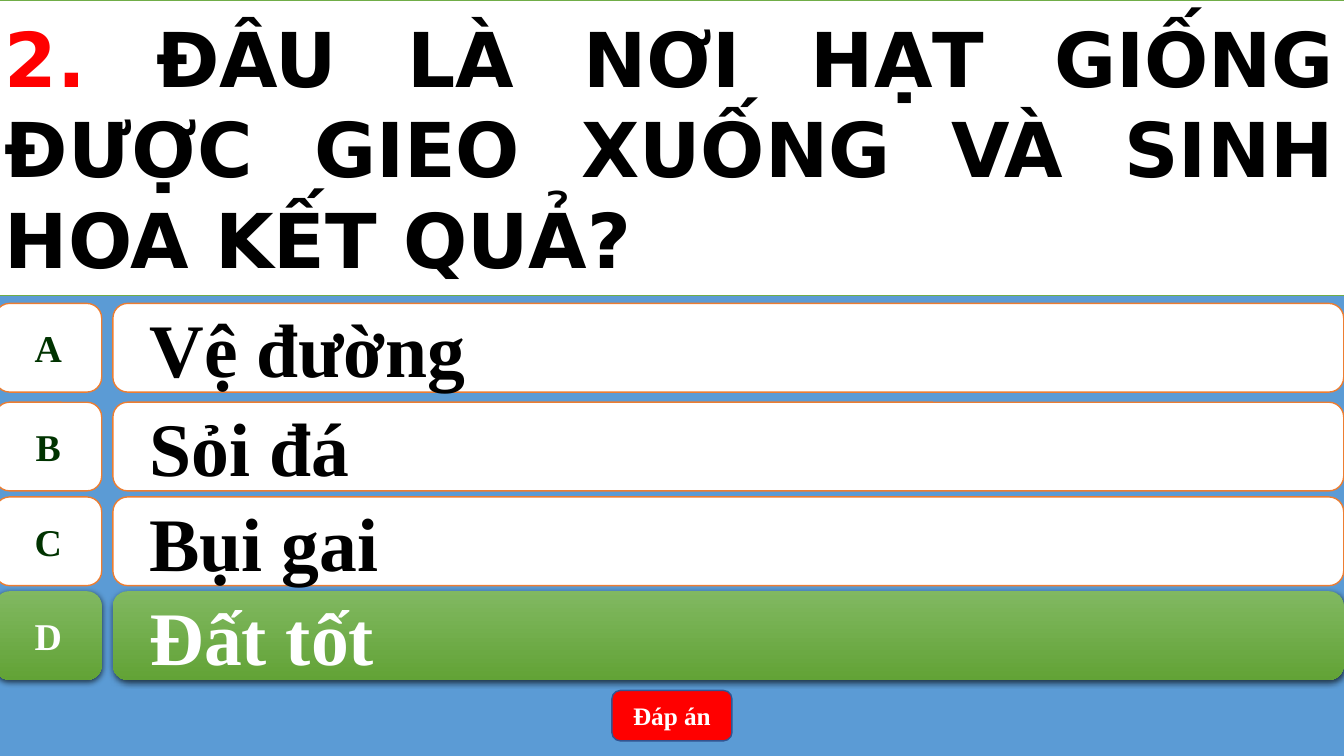
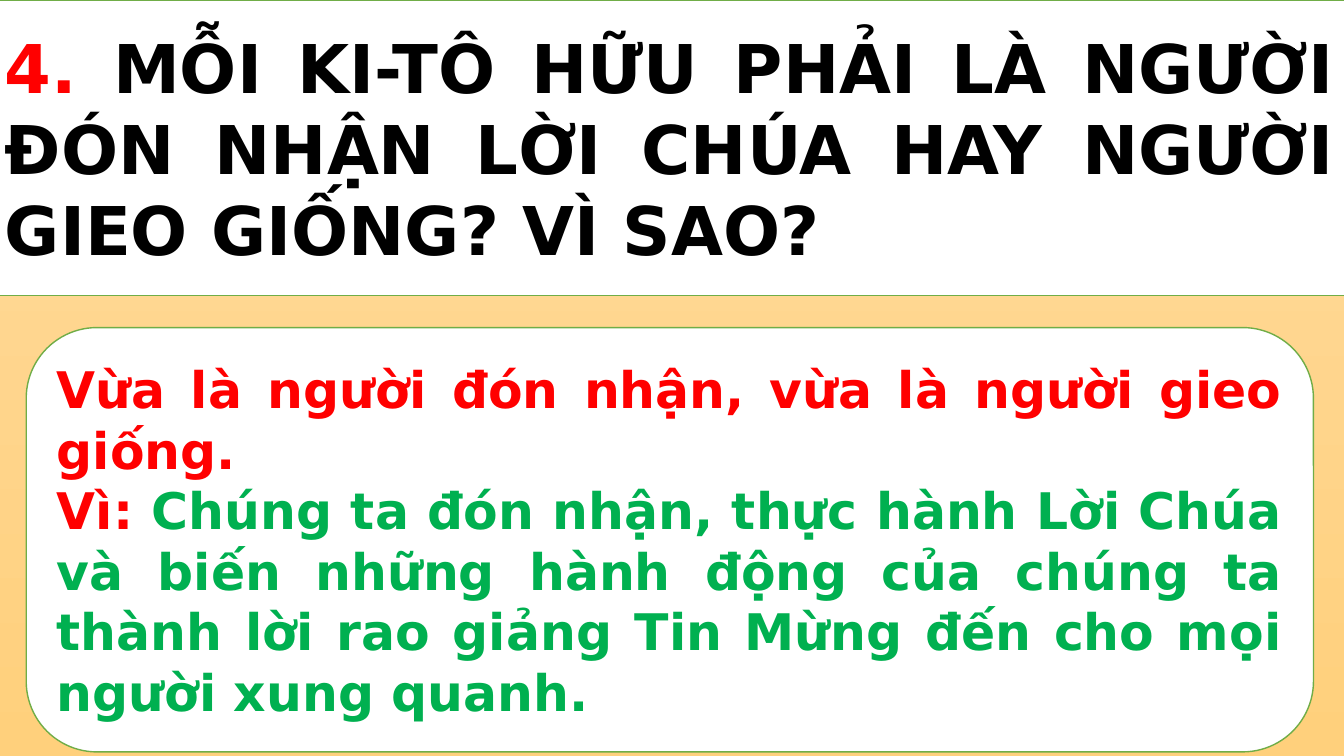
from lxml import etree
from pptx import Presentation
from pptx.dml.color import RGBColor
from pptx.enum.shapes import MSO_SHAPE
from pptx.enum.text import MSO_ANCHOR, MSO_AUTO_SIZE, PP_ALIGN
from pptx.oxml.ns import qn
from pptx.util import Inches, Pt

ROUNDED = MSO_SHAPE.ROUNDED_RECTANGLE
KEY_SHAPE = MSO_SHAPE.FLOWCHART_ALTERNATE_PROCESS
MIDDLE = MSO_ANCHOR.MIDDLE
NO_AUTOFIT = MSO_AUTO_SIZE.NONE
LEFT, CENTER, JUSTIFY = PP_ALIGN.LEFT, PP_ALIGN.CENTER, PP_ALIGN.JUSTIFY

TITLE_ONLY = 5
SANS, SERIF = "DejaVu Sans", "Times New Roman"
COLOURS = {
    "white": "FFFFFF", "black": "000000", "red": "FF0000", "blue": "5B9BD5",
    "navy": "325491", "orange": "ED7D31", "leaf": "70AD47", "key": "003300",
    "reason": "00B050", "green_top": "81B861", "green_bottom": "62A336",
    "sand_top": "FFDB9E", "sand_bottom": "FFD07C",
}
GREEN = ("green_top", "green_bottom")
SAND = ("sand_top", "sand_bottom")

QUESTION_BOX = (-0.38, 0, 100.43, 39.07)
KEY_LEFT, KEY_WIDTH = -0.38, 7.95
CHOICE_LEFT, CHOICE_WIDTH = 8.4, 91.58
ROW_HEIGHT = 11.73
BUTTON_BOX = (45.53, 91.33, 8.93, 6.67)
PANEL_BOX = (1.95, 43.33, 95.78, 56.13)


class QuizDeck:
    """Quiz slides in one style, with boxes given in percent of the slide."""

    def __init__(self):
        self.presentation = Presentation()
        self.presentation.slide_width = Inches(13.33)
        self.presentation.slide_height = Inches(7.5)
        self.slide = None

    def colour(self, name):
        return RGBColor.from_string(COLOURS[name])

    def place(self, box):
        width = self.presentation.slide_width
        height = self.presentation.slide_height
        return [round(share * side / 100)
                for share, side in zip(box, (width, height, width, height))]

    def paint(self, fill, colour):
        if isinstance(colour, str):
            fill.solid()
            fill.fore_color.rgb = self.colour(colour)
            return
        fill.gradient()
        fill.gradient_angle = 270
        for stop, name in zip(fill.gradient_stops, colour):
            stop.color.rgb = self.colour(name)

    def outline(self, shape, colour):
        if colour is None:
            shape.line.fill.background()
            return
        shape.line.color.rgb = self.colour(colour)
        shape.line.width = Pt(1)

    def set_text(self, shape, paragraphs, font, size, alignment):
        frame = shape.text_frame
        frame.auto_size = NO_AUTOFIT
        frame.word_wrap = True
        frame.vertical_anchor = MIDDLE
        for index, runs in enumerate(paragraphs):
            paragraph = frame.add_paragraph() if index else frame.paragraphs[0]
            paragraph.alignment = alignment
            paragraph.font.name = font
            paragraph.font.size = Pt(size)
            paragraph.font.bold = True
            for text, colour in runs:
                run = paragraph.add_run()
                run.text = text
                run.font.color.rgb = self.colour(colour)

    def cast_shadow(self, shape):
        effects = shape._element.spPr.find(qn("a:effectLst"))
        shadow = etree.SubElement(effects, qn("a:outerShdw"), blurRad="57150",
                                  dist="19050", dir="5400000", algn="ctr",
                                  rotWithShape="0")
        black = etree.SubElement(shadow, qn("a:srgbClr"), val=COLOURS["black"])
        etree.SubElement(black, qn("a:alpha"), val="63000")

    def box(self, kind, box, fill, line):
        shape = self.slide.shapes.add_shape(kind, *self.place(box))
        shape.shadow.inherit = False
        self.paint(shape.fill, fill)
        self.outline(shape, line)
        return shape

    def question(self, background, number, text, size):
        layout = self.presentation.slide_layouts[TITLE_ONLY]
        self.slide = self.presentation.slides.add_slide(layout)
        self.paint(self.slide.background.fill, background)
        title = self.slide.shapes.title
        title.left, title.top, title.width, title.height = self.place(QUESTION_BOX)
        self.paint(title.fill, "white")
        self.outline(title, "leaf")
        runs = [(f"{number}. ", "red"), (text, "black")]
        self.set_text(title, [runs], SANS, size, JUSTIFY)

    def choice(self, top, letter, text, correct):
        fill, line = (GREEN, None) if correct else ("white", "orange")
        key = self.box(KEY_SHAPE, (KEY_LEFT, top, KEY_WIDTH, ROW_HEIGHT), fill, line)
        bar = self.box(ROUNDED, (CHOICE_LEFT, top, CHOICE_WIDTH, ROW_HEIGHT), fill, line)
        key_colour, text_colour = ("white", "white") if correct else ("key", "black")
        self.set_text(key, [[(letter, key_colour)]], SERIF, 27, CENTER)
        self.set_text(bar, [[(text, text_colour)]], SERIF, 54, LEFT)
        bar.text_frame.margin_left = Inches(0.32)
        if correct:
            self.cast_shadow(key)
            self.cast_shadow(bar)

    def button(self, text):
        shape = self.box(ROUNDED, BUTTON_BOX, "red", "navy")
        self.set_text(shape, [[(text, "white")]], SERIF, 18, CENTER)

    def panel(self, paragraphs):
        shape = self.box(ROUNDED, PANEL_BOX, "white", "leaf")
        self.set_text(shape, paragraphs, SANS, 36, JUSTIFY)

    def save(self):
        self.presentation.save("out.pptx")


def main():
    deck = QuizDeck()

    deck.question("blue", 2, "ĐÂU LÀ NƠI HẠT GIỐNG ĐƯỢC GIEO XUỐNG VÀ SINH HOA KẾT QUẢ?", 54)
    choices = [
        (40.13, "A", "Vệ đường"),
        (53.2, "B", "Sỏi đá"),
        (65.73, "C", "Bụi gai"),
        (78.2, "D", "Đất tốt"),
    ]
    for top, letter, text in choices:
        deck.choice(top, letter, text, correct=letter == "D")
    deck.button("Đáp án")

    deck.question(SAND, 4, "MỖI KI-TÔ HỮU PHẢI LÀ NGƯỜI ĐÓN NHẬN LỜI CHÚA "
                  "HAY NGƯỜI GIEO GIỐNG? VÌ SAO?", 48)
    deck.panel([
        [("Vừa là người đón nhận, vừa là người gieo giống.", "red")],
        [("Vì: ", "red"),
         ("Chúng ta đón nhận, thực hành Lời Chúa và biến những hành động của "
          "chúng ta thành lời rao giảng Tin Mừng đến cho mọi người xung quanh.",
          "reason")],
    ])
    deck.save()


if __name__ == "__main__":
    main()
